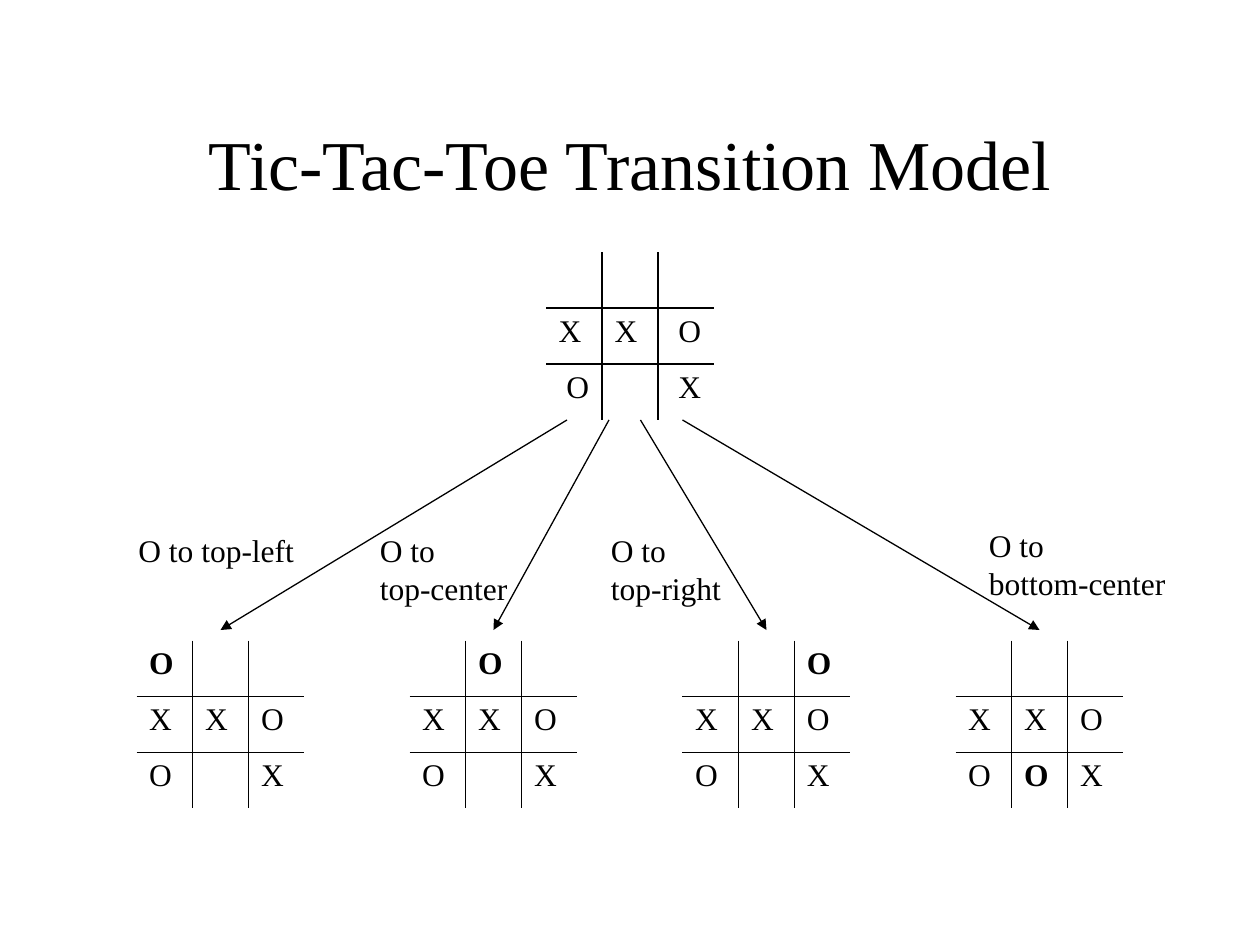
from dataclasses import dataclass
from itertools import product

from lxml.etree import SubElement
from pptx import Presentation
from pptx.dml.color import RGBColor
from pptx.enum.shapes import MSO_CONNECTOR
from pptx.enum.text import MSO_ANCHOR, MSO_AUTO_SIZE, PP_ALIGN
from pptx.oxml.ns import qn
from pptx.slide import Slide
from pptx.util import Pt


@dataclass(frozen=True)
class Theme:
    font: str = "Times New Roman"
    ink: str = "000000"
    title_size: int = 40
    text_size: int = 18
    grid_line: float = 1
    arrow_line: float = 0.75


@dataclass(frozen=True)
class Move:
    """One O move: its square, its label and where its arrow starts."""
    row: int
    col: int
    label: tuple[str, ...]
    label_left: float
    label_top: float
    label_width: float
    arrow_start: float


THEME = Theme()
SIDE = 3
SQUARE = 32
BOARD = SIDE * SQUARE
ROOT_LEFT, ROOT_TOP = 312, 144
CHILD_LEFT, CHILD_TOP, CHILD_STEP = 78, 366, 156
ARROW_GAP = 6

ROOT_MARKS = [["", "", ""], ["X", "X", " O"], [" O", "", " X"]]
MOVES = [
    Move(0, 0, ("O to top-left",), 72, 300, 104, 324),
    Move(0, 1, ("O to", "top-center"), 210, 300, 91, 348),
    Move(0, 2, ("O to ", "top-right"), 342, 300, 91, 366),
    Move(2, 1, ("O to", "bottom-center"), 558, 297, 120, 390),
]


def add_text(paragraph, text: str, size: float, bold: bool = False) -> None:
    run = paragraph.add_run()
    run.text = text
    run.font.name = THEME.font
    run.font.size = Pt(size)
    run.font.bold = bold
    run.font.color.rgb = RGBColor.from_string(THEME.ink)


def set_border(cell, tag: str, visible: bool) -> None:
    line = SubElement(cell._tc.get_or_add_tcPr(), qn(tag), w=str(Pt(THEME.grid_line)))
    if visible:
        fill = SubElement(line, qn("a:solidFill"))
        SubElement(fill, qn("a:srgbClr"), val=THEME.ink)
    else:
        SubElement(line, qn("a:noFill"))


def add_board(slide: Slide, left: float, top: float, marks: list[list[str]],
              new_square: tuple[int, int] | None = None) -> None:
    board = slide.shapes.add_table(
        SIDE, SIDE, Pt(left), Pt(top), Pt(BOARD), Pt(BOARD)).table
    board.first_row = False
    board.horz_banding = False
    for line in (*board.columns, ):
        line.width = Pt(SQUARE)
    for line in board.rows:
        line.height = Pt(SQUARE)

    last = SIDE - 1
    for row, col in product(range(SIDE), repeat=2):
        cell = board.cell(row, col)
        # Only the inner edges of the board are drawn
        set_border(cell, "a:lnL", col > 0)
        set_border(cell, "a:lnR", col < last)
        set_border(cell, "a:lnT", row > 0)
        set_border(cell, "a:lnB", row < last)
        cell.fill.background()
        if marks[row][col]:
            add_text(cell.text_frame.paragraphs[0], marks[row][col],
                     THEME.text_size, bold=(row, col) == new_square)


def add_arrow(slide: Slide, start_x: float, start_y: float,
              end_x: float, end_y: float) -> None:
    arrow = slide.shapes.add_connector(
        MSO_CONNECTOR.STRAIGHT, Pt(start_x), Pt(start_y), Pt(end_x), Pt(end_y))
    arrow.line.color.rgb = RGBColor.from_string(THEME.ink)
    arrow.line.width = Pt(THEME.arrow_line)
    SubElement(arrow.line._get_or_add_ln(), qn("a:tailEnd"), type="triangle")
    SubElement(arrow._element.spPr, qn("a:effectLst"))


def add_label(slide: Slide, move: Move) -> None:
    height = 29 if len(move.label) == 1 else 50
    label = slide.shapes.add_textbox(
        Pt(move.label_left), Pt(move.label_top), Pt(move.label_width), Pt(height))
    frame = label.text_frame
    frame.word_wrap = len(move.label) > 1
    frame.auto_size = MSO_AUTO_SIZE.SHAPE_TO_FIT_TEXT
    paragraph = frame.paragraphs[0]
    for index, text in enumerate(move.label):
        if index:
            paragraph.add_line_break()
        add_text(paragraph, text, THEME.text_size)


def main() -> None:
    presentation = Presentation()
    presentation.slide_width, presentation.slide_height = Pt(720), Pt(540)
    slide = presentation.slides.add_slide(presentation.slide_layouts[5])

    # Title
    title = slide.shapes.title
    title.left, title.top, title.width, title.height = Pt(54), Pt(48), Pt(612), Pt(90)
    title.text_frame.vertical_anchor = MSO_ANCHOR.MIDDLE
    heading = title.text_frame.paragraphs[0]
    heading.alignment = PP_ALIGN.CENTER
    add_text(heading, "Tic-Tac-Toe Transition Model", THEME.title_size)

    # Current state
    add_board(slide, ROOT_LEFT, ROOT_TOP, ROOT_MARKS)

    # Successor states, each with its arrow and label
    for index, move in enumerate(MOVES):
        left = CHILD_LEFT + index * CHILD_STEP
        marks = [[mark.strip() for mark in row] for row in ROOT_MARKS]
        marks[move.row][move.col] = "O"
        add_board(slide, left, CHILD_TOP, marks, (move.row, move.col))
        add_arrow(slide, move.arrow_start, ROOT_TOP + BOARD,
                  left + BOARD / 2, CHILD_TOP - ARROW_GAP)
        add_label(slide, move)

    presentation.save("out.pptx")


if __name__ == "__main__":
    main()
